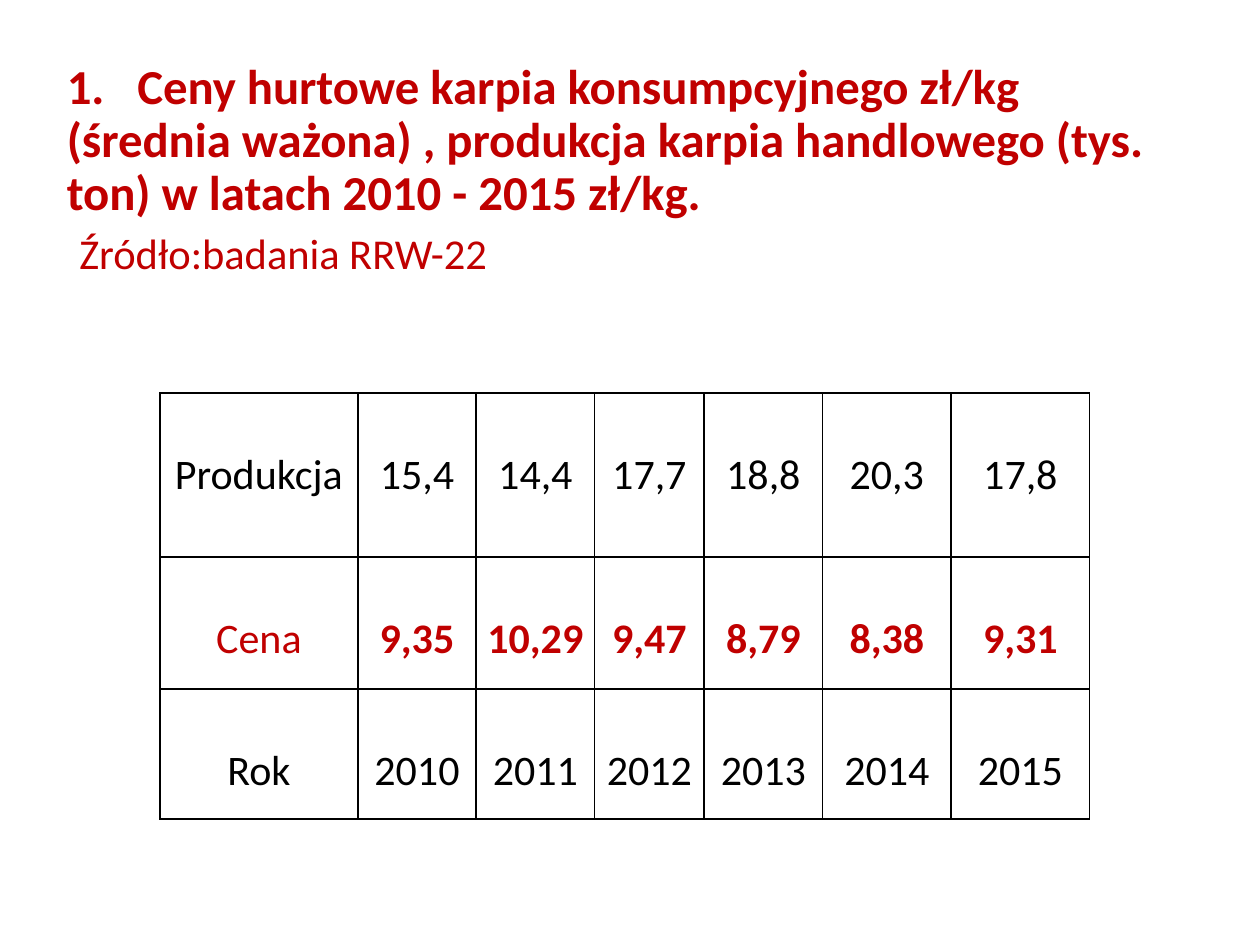
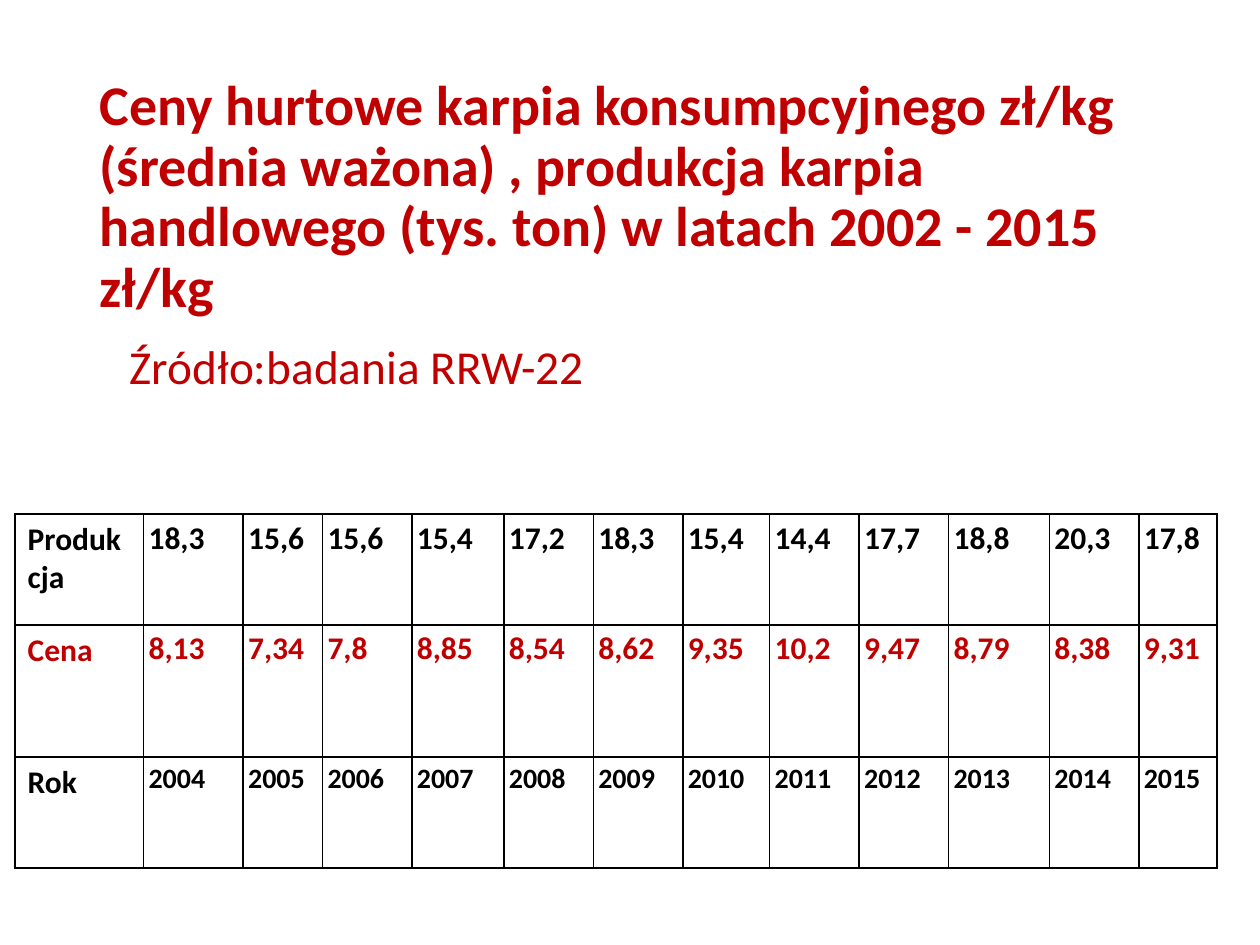
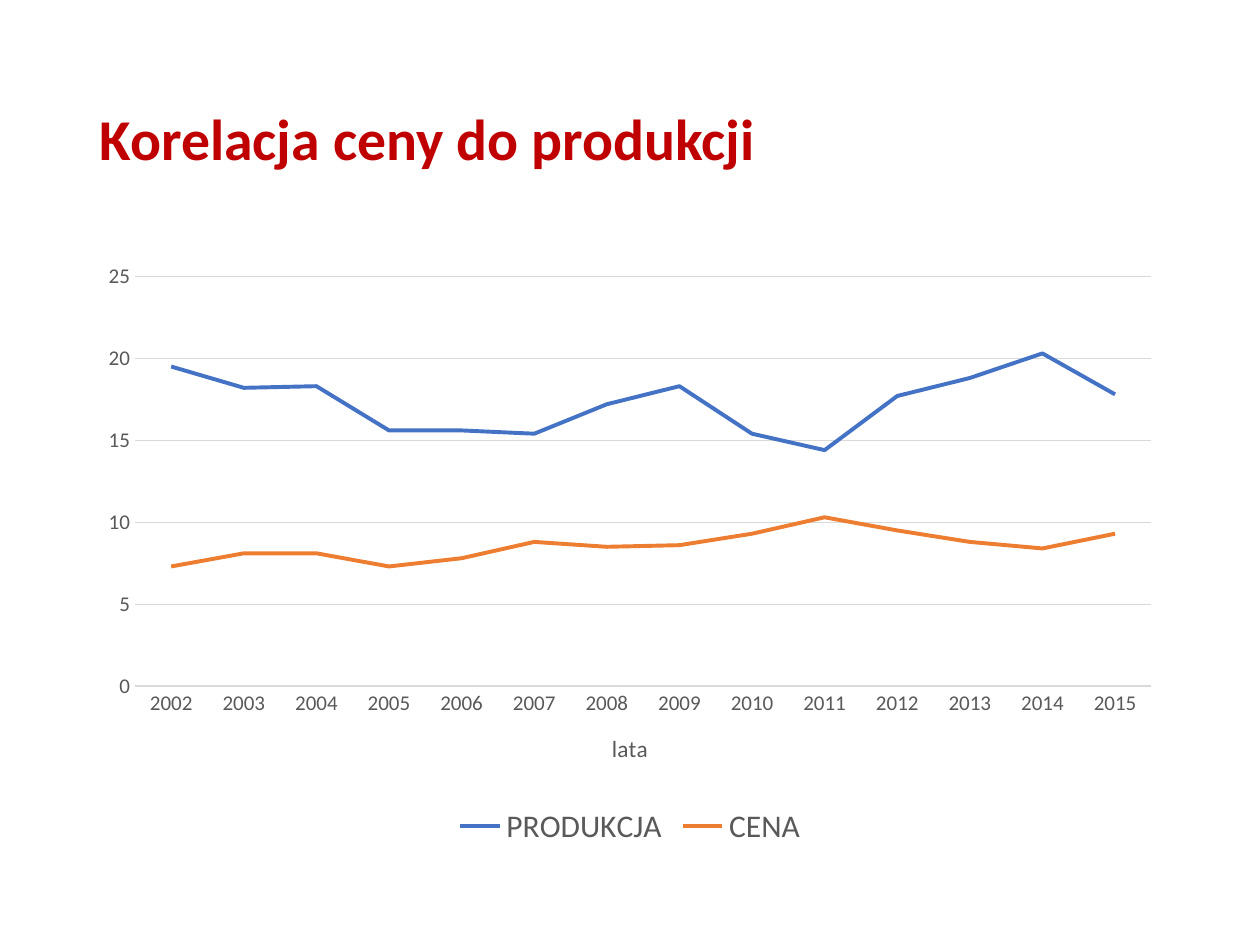
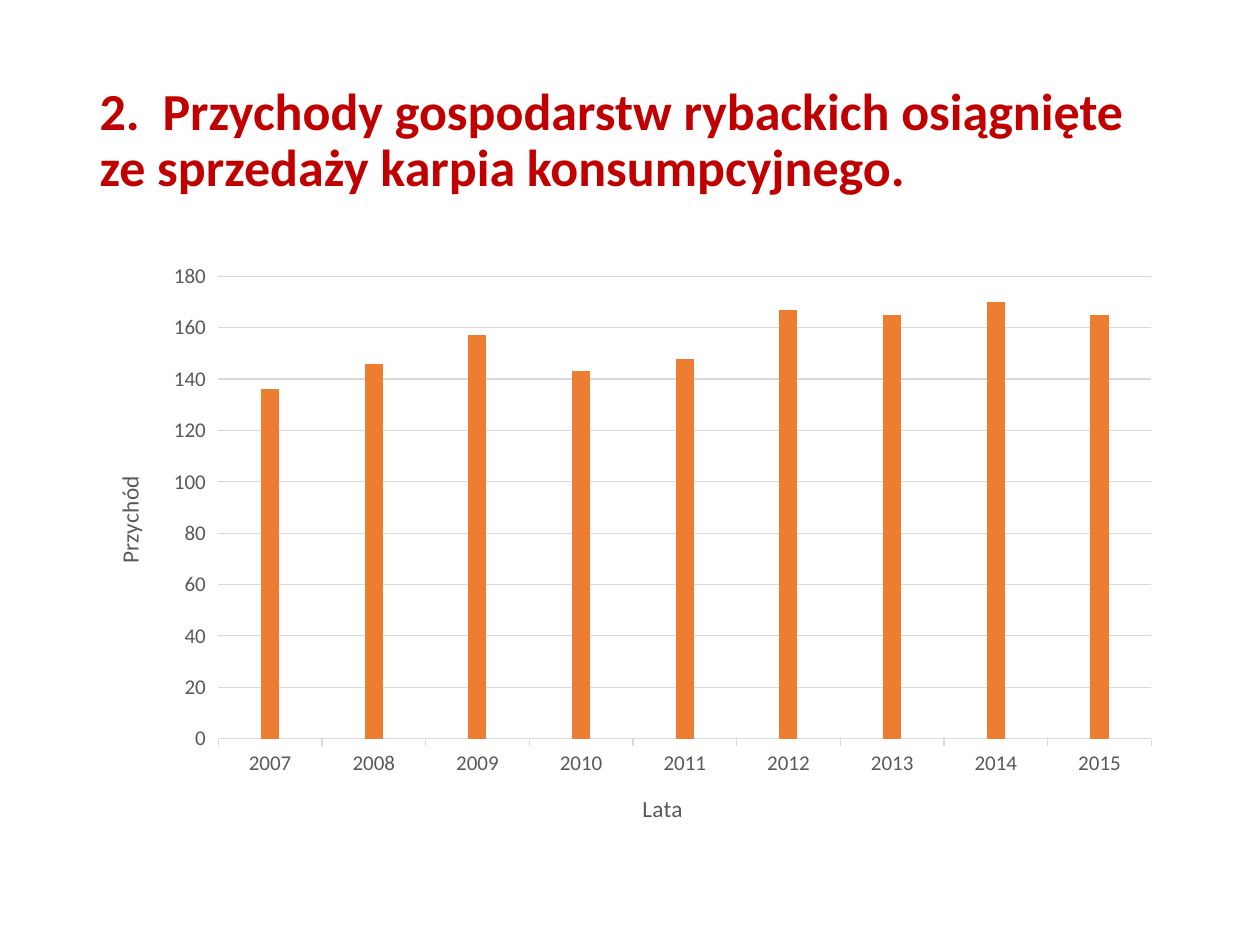
from dataclasses import dataclass
from typing import Optional

from lxml.etree import SubElement
from pptx import Presentation
from pptx.chart.data import CategoryChartData
from pptx.dml.color import RGBColor
from pptx.enum.chart import XL_CHART_TYPE, XL_LEGEND_POSITION, XL_TICK_MARK
from pptx.enum.text import MSO_ANCHOR, MSO_AUTO_SIZE, PP_ALIGN
from pptx.oxml.ns import qn
from pptx.util import Inches, Pt

FONT = "Calibri"
RED = RGBColor(0xC0, 0x00, 0x00)
BLACK = RGBColor(0x00, 0x00, 0x00)
WHITE = RGBColor(0xFF, 0xFF, 0xFF)
GREY = RGBColor(0x59, 0x59, 0x59)
GRID = RGBColor(0xD9, 0xD9, 0xD9)
BLUE = RGBColor(0x44, 0x72, 0xC4)
ORANGE = RGBColor(0xED, 0x7D, 0x31)
SILVER = RGBColor(0xA5, 0xA5, 0xA5)
SOURCE = "Źródło:badania RRW-22"
TITLE_BOX = (0.69, 0.4, 8.62, 1.45)
CHART_BOX = (0.69, 2, 8.62, 4.76)


@dataclass
class Title:
    text: str
    size: float
    box: tuple = TITLE_BOX
    tab: Optional[float] = None
    bottom_margin: float = 0.05
    source_size: Optional[float] = None
    source_indent: float = 0
    source_gap: float = 0


@dataclass
class Row:
    label: str
    values: str
    height: float
    size: float
    color: RGBColor = BLACK
    label_bold: bool = False
    value_bold: bool = False


@dataclass
class Grid:
    left: float
    top: float
    widths: list
    rows: list
    align: PP_ALIGN
    top_margin: float
    label_margins: tuple


@dataclass
class Series:
    name: str
    values: list
    color: RGBColor


@dataclass
class ChartData:
    kind: XL_CHART_TYPE
    first_year: int
    series: list
    category_title: str
    value_title: Optional[str] = None
    legend: bool = False
    tick: XL_TICK_MARK = XL_TICK_MARK.NONE


def style_font(font, size: float, color: RGBColor, bold: bool = False) -> None:
    font.name = FONT
    font.size = Pt(size)
    font.bold = bold
    font.color.rgb = color


def add_run(paragraph, text: str, size: float, color: RGBColor, bold: bool = False) -> None:
    run = paragraph.add_run()
    run.text = text
    style_font(run.font, size, color, bold)


def add_titled_slide(presentation, title: Title):
    slide = presentation.slides.add_slide(presentation.slide_layouts[5])
    shape = slide.shapes.title
    shape.left, shape.top, shape.width, shape.height = map(Inches, title.box)
    frame = shape.text_frame
    frame.word_wrap = True
    frame.auto_size = MSO_AUTO_SIZE.NONE
    frame.vertical_anchor = MSO_ANCHOR.MIDDLE
    frame.margin_bottom = Inches(title.bottom_margin)
    paragraph = frame.paragraphs[0]
    paragraph.alignment = PP_ALIGN.LEFT
    paragraph.line_spacing = 0.9
    add_run(paragraph, title.text, title.size, RED, True)
    if title.tab:
        tabs = SubElement(paragraph._p.get_or_add_pPr(), qn("a:tabLst"))
        SubElement(tabs, qn("a:tab"), pos=str(Inches(title.tab)), algn="l")
    if title.source_size:
        source = frame.add_paragraph()
        source.alignment = PP_ALIGN.LEFT
        source.line_spacing = 0.9
        source.space_before = Pt(title.source_gap)
        source._p.get_or_add_pPr().set("marL", str(Inches(title.source_indent)))
        add_run(source, SOURCE, title.source_size, RED)
    return slide


def add_borders(cell) -> None:
    properties = cell._tc.get_or_add_tcPr()
    for position, side in enumerate(("lnL", "lnR", "lnT", "lnB")):
        line = SubElement(properties, qn(f"a:{side}"), w=str(Pt(1)))
        fill = SubElement(line, qn("a:solidFill"))
        SubElement(fill, qn("a:srgbClr"), val=str(BLACK))
        properties.insert(position, line)


def add_grid(slide, grid: Grid) -> None:
    heights = [row.height for row in grid.rows]
    table = slide.shapes.add_table(
        len(grid.rows), len(grid.widths), Inches(grid.left), Inches(grid.top),
        Inches(sum(grid.widths)), Inches(sum(heights)),
    ).table
    for column, width in zip(table.columns, grid.widths):
        column.width = Inches(width)
    for row_index, row in enumerate(grid.rows):
        table.rows[row_index].height = Inches(row.height)
        for column_index, text in enumerate([row.label, *row.values.split()]):
            is_label = column_index == 0
            cell = table.cell(row_index, column_index)
            side, top = grid.label_margins if is_label else (0.04, grid.top_margin)
            cell.margin_left = cell.margin_right = Inches(side)
            cell.margin_top = Inches(top)
            cell.margin_bottom = Inches(0.04)
            cell.vertical_anchor = MSO_ANCHOR.TOP
            cell.fill.solid()
            cell.fill.fore_color.rgb = WHITE
            add_borders(cell)
            paragraph = cell.text_frame.paragraphs[0]
            paragraph.alignment = grid.align
            size = 18 if is_label and row.label_bold else row.size
            bold = row.label_bold if is_label else row.value_bold
            add_run(paragraph, text, size, row.color, bold)


def style_axis(axis, title: Optional[str], tick: XL_TICK_MARK) -> None:
    axis.major_tick_mark = tick
    axis.minor_tick_mark = XL_TICK_MARK.NONE
    style_font(axis.tick_labels.font, 12, GREY)
    axis.has_title = title is not None
    if title:
        add_run(axis.axis_title.text_frame.paragraphs[0], title, 13.3, GREY)


def style_line(line, color: RGBColor, width: float) -> None:
    line.color.rgb = color
    line.width = Pt(width)


def add_chart(slide, content: ChartData) -> None:
    data = CategoryChartData()
    count = len(content.series[0].values)
    data.categories = [str(content.first_year + index) for index in range(count)]
    for series in content.series:
        data.add_series(series.name, series.values)
    chart = slide.shapes.add_chart(content.kind, *map(Inches, CHART_BOX), data).chart
    style_font(chart.font, 10, BLACK)
    chart.has_title = False
    chart.has_legend = content.legend
    if content.legend:
        chart.legend.position = XL_LEGEND_POSITION.BOTTOM
        chart.legend.include_in_layout = False
        style_font(chart.legend.font, 18, GREY)
    style_axis(chart.category_axis, content.category_title, content.tick)
    style_axis(chart.value_axis, content.value_title, content.tick)
    style_line(chart.category_axis.format.line, GRID, 0.75)
    chart.value_axis.format.line.fill.background()
    chart.value_axis.has_major_gridlines = True
    style_line(chart.value_axis.major_gridlines.format.line, GRID, 0.75)
    plot = chart.plots[0]
    plot.vary_by_categories = False
    is_line = content.kind == XL_CHART_TYPE.LINE
    if not is_line:
        plot.gap_width = 219
        plot.overlap = -27
    for drawn, series in zip(plot.series, content.series):
        if is_line:
            drawn.smooth = False
            style_line(drawn.format.line, series.color, 2.25)
        else:
            drawn.format.fill.solid()
            drawn.format.fill.fore_color.rgb = series.color


RECENT_TITLE = Title(
    "1.\tCeny hurtowe karpia konsumpcyjnego zł/kg (średnia ważona) , produkcja karpia "
    "handlowego (tys. ton) w latach 2010 - 2015 zł/kg.",
    27.9, box=(0.43, 1.21, 9.07, 0.61), tab=0.56, bottom_margin=0.37,
    source_size=24.3, source_indent=0.1, source_gap=7,
)
RECENT_GRID = Grid(
    1.27, 3.12, [1.57, 0.94, 0.94, 0.87, 0.94, 1.02, 1.1],
    [
        Row("Produkcja", "15,4 14,4 17,7 18,8 20,3 17,8", 1.3, 24),
        Row("Cena", "9,35 10,29 9,47 8,79 8,38 9,31", 1.05, 24, RED, value_bold=True),
        Row("Rok", "2010 2011 2012 2013 2014 2015", 1.03, 24),
    ],
    PP_ALIGN.CENTER, 0.45, (0.04, 0.45),
)
LONG_TITLE = Title(
    "Ceny hurtowe karpia konsumpcyjnego zł/kg (średnia ważona) , produkcja karpia "
    "handlowego (tys. ton) w latach 2002 - 2015 zł/kg",
    32, box=(0.69, 0.4, 8.62, 3.43), bottom_margin=0.53,
    source_size=27, source_indent=0.24, source_gap=14,
)
LONG_GRID = Grid(
    0.12, 4.08,
    [1.02, 0.79, 0.63, 0.71, 0.73, 0.71, 0.71, 0.69, 0.71, 0.71, 0.8, 0.71, 0.62],
    [
        Row("Produkcja", "18,3 15,6 15,6 15,4 17,2 18,3 15,4 14,4 17,7 18,8 20,3 17,8",
            0.88, 18, BLACK, True, True),
        Row("Cena", "8,13 7,34 7,8 8,85 8,54 8,62 9,35 10,2 9,47 8,79 8,38 9,31",
            1.05, 18, RED, True, True),
        Row("Rok", " ".join(str(year) for year in range(2004, 2016)),
            0.88, 16, BLACK, True, True),
    ],
    PP_ALIGN.LEFT, 0.04, (0.1, 0.05),
)
CORRELATION_TITLE = Title("Korelacja ceny do produkcji", 33)
CORRELATION_CHART = ChartData(
    XL_CHART_TYPE.LINE, 2002,
    [
        Series("PRODUKCJA", [19.5, 18.2, 18.3, 15.6, 15.6, 15.4, 17.2,
                             18.3, 15.4, 14.4, 17.7, 18.8, 20.3, 17.8], BLUE),
        Series("CENA", [7.3, 8.1, 8.1, 7.3, 7.8, 8.8, 8.5,
                        8.6, 9.3, 10.3, 9.5, 8.8, 8.4, 9.3], ORANGE),
    ],
    "lata", legend=True,
)
REVENUE_TITLE = Title(
    "2.\tPrzychody gospodarstw rybackich osiągnięte ze sprzedaży karpia konsumpcyjnego.",
    29.7, tab=0.5,
)
REVENUE_CHART = ChartData(
    XL_CHART_TYPE.COLUMN_CLUSTERED, 2007,
    [
        Series("Series 1", [None] * 9, BLUE),
        Series("Series 2", [136, 146, 157, 143, 148, 167, 165, 170, 165], ORANGE),
        Series("Series 3", [None] * 9, SILVER),
    ],
    "Lata", "Przychód", tick=XL_TICK_MARK.OUTSIDE,
)


def main() -> None:
    presentation = Presentation()
    presentation.slide_width = Inches(10)
    presentation.slide_height = Inches(7.5)
    add_grid(add_titled_slide(presentation, RECENT_TITLE), RECENT_GRID)
    add_grid(add_titled_slide(presentation, LONG_TITLE), LONG_GRID)
    add_chart(add_titled_slide(presentation, CORRELATION_TITLE), CORRELATION_CHART)
    add_chart(add_titled_slide(presentation, REVENUE_TITLE), REVENUE_CHART)
    presentation.save("out.pptx")


if __name__ == "__main__":
    main()
